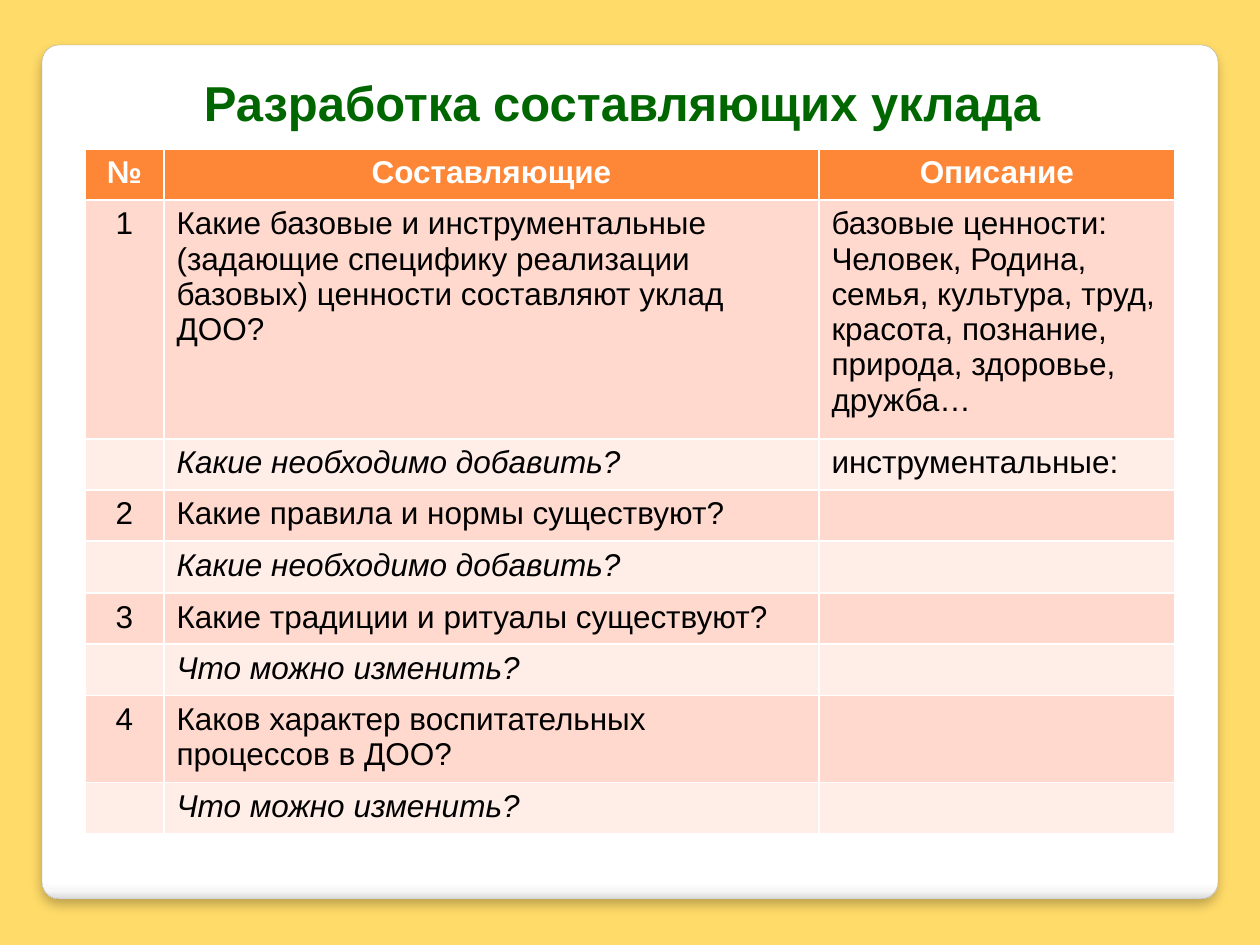
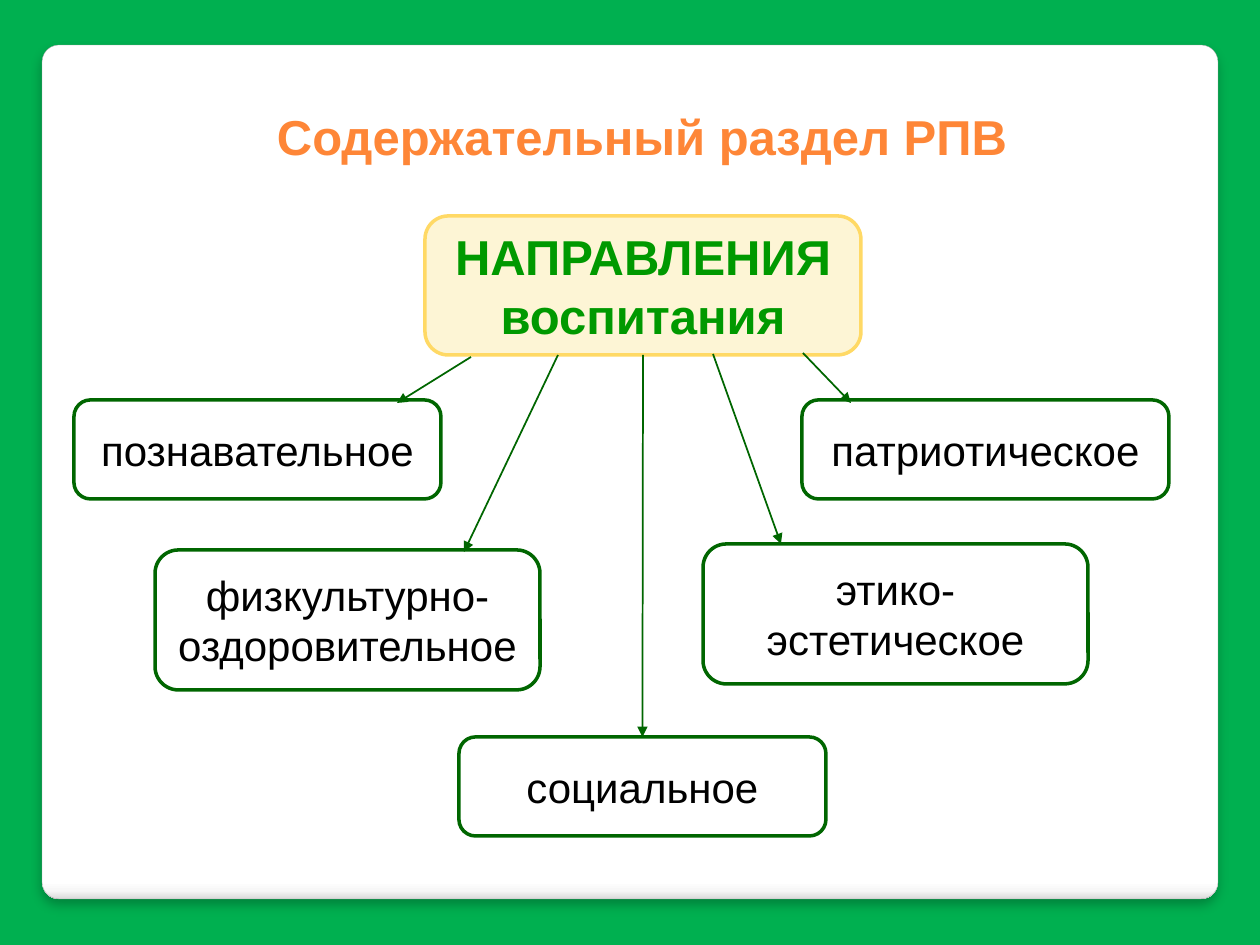
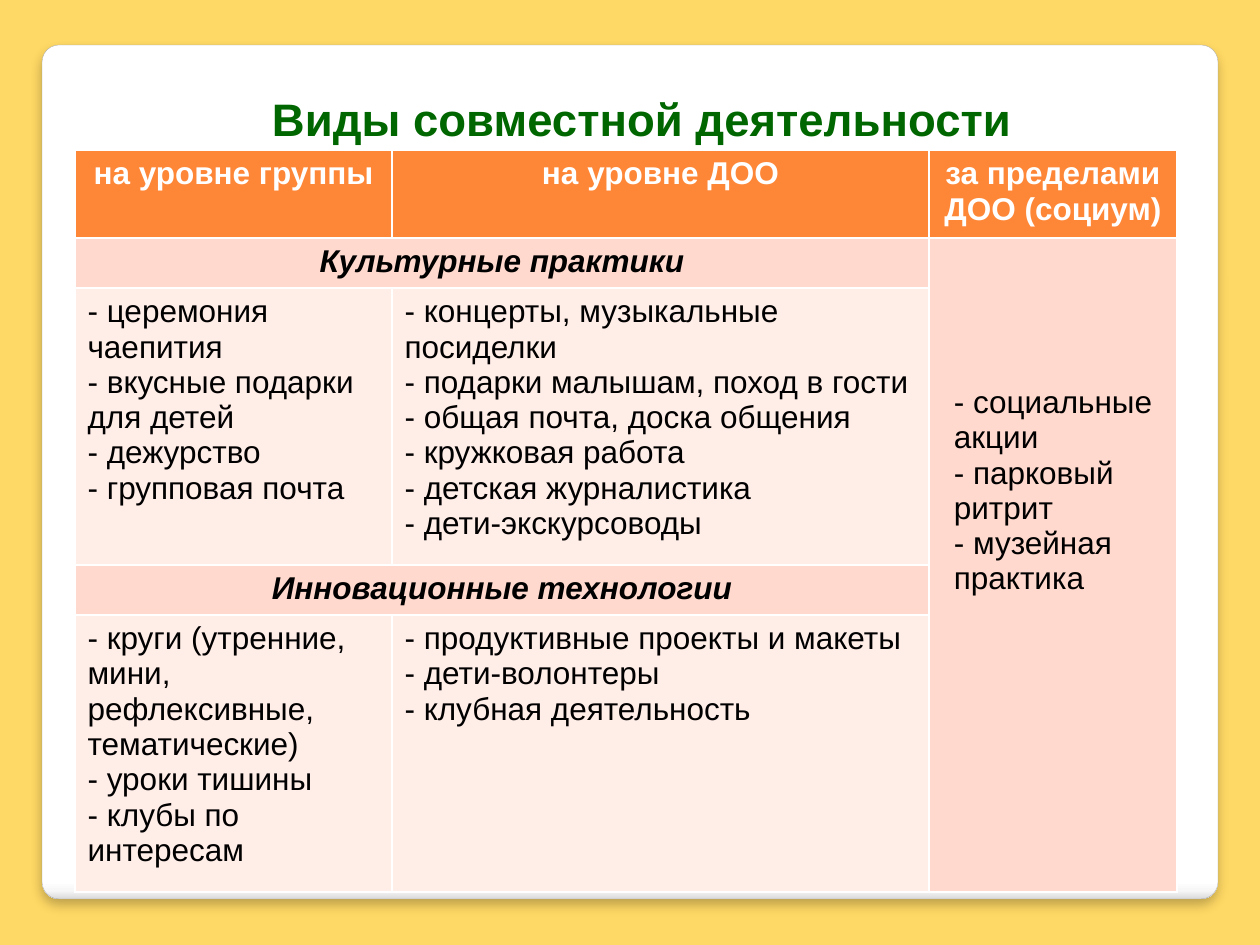
from lxml.etree import SubElement
from pptx import Presentation
from pptx.dml.color import RGBColor
from pptx.enum.shapes import MSO_CONNECTOR, MSO_SHAPE
from pptx.enum.text import MSO_ANCHOR, MSO_AUTO_SIZE, PP_ALIGN
from pptx.oxml.ns import qn
from pptx.util import Emu, Pt

FONT = "Arial"
YELLOW = RGBColor(0xFF, 0xDB, 0x69)
GOLD = RGBColor(0xFF, 0xD9, 0x65)
CREAM = RGBColor(0xFD, 0xF5, 0xD5)
GREEN = RGBColor(0x00, 0xB0, 0x50)
MID_GREEN = RGBColor(0x00, 0x99, 0x00)
DARK_GREEN = RGBColor(0x00, 0x66, 0x00)
ORANGE = RGBColor(0xFE, 0x86, 0x37)
BANDS = RGBColor(0xFF, 0xED, 0xE8), RGBColor(0xFF, 0xD9, 0xCE)
WHITE = RGBColor(0xFF, 0xFF, 0xFF)
BLACK = RGBColor(0x00, 0x00, 0x00)
GREY = RGBColor(0xA4, 0xA4, 0xA4)
CARD_STOPS = ((0, "FFFFFF"), (98, "FFFFFF"), (99, "F7F7F7"), (100, "DADADA"))


def px(n):
    return Emu(round(n * 914400 / 126))


def add_color(parent, value, alpha=None):
    clr = SubElement(parent, qn("a:srgbClr"), val=value)
    if alpha:
        SubElement(clr, qn("a:alpha"), val=str(alpha * 1000))


class Deck:
    def __init__(self):
        self.prs = Presentation()
        self.prs.slide_width, self.prs.slide_height = px(1260), px(945)
        self.s = None

    def slide(self, background):
        self.s = self.prs.slides.add_slide(self.prs.slide_layouts[5])
        fill = self.s.background.fill
        fill.solid()
        fill.fore_color.rgb = background
        self.card()

    def card(self):
        """White rounded panel, placed behind the title."""
        sp = self.s.shapes.add_shape(
            MSO_SHAPE.ROUNDED_RECTANGLE, px(42), px(45), px(1176), px(854))
        sp.adjustments[0] = 0.02
        sp.line.color.rgb = GREY
        sp.line.width = Pt(0.16)
        sp.fill.gradient()
        sp.fill.gradient_angle = 270
        stops = sp.element.spPr.find(".//" + qn("a:gsLst"))
        stops.clear()
        for pos, value in CARD_STOPS:
            add_color(SubElement(stops, qn("a:gs"), pos=str(pos * 1000)), value)
        sp.shadow.inherit = False
        shadow = SubElement(
            sp.element.spPr.find(qn("a:effectLst")), qn("a:outerShdw"),
            blurRad=str(Pt(6)), dist=str(Pt(4)), dir="5400000",
            algn="t", rotWithShape="0")
        add_color(shadow, "000000", 25)
        self.s.shapes.title.element.addprevious(sp.element)

    def set_text(self, tf, text, size, color, bold=False, italic=False,
                 align=PP_ALIGN.CENTER, spacing=None):
        tf.text = text
        tf.word_wrap = True
        for p in tf.paragraphs:
            p.alignment = align
            p.line_spacing = spacing
            p.font.name = FONT
            p.font.size = Pt(size)
            p.font.color.rgb = color
            p.font.bold = bold
            p.font.italic = italic

    def title(self, text, x, y, w, h, color=DARK_GREEN, size=28, spacing=None):
        sp = self.s.shapes.title
        sp.left, sp.top, sp.width, sp.height = map(px, (x, y, w, h))
        tf = sp.text_frame
        tf.auto_size = MSO_AUTO_SIZE.NONE
        tf.vertical_anchor = MSO_ANCHOR.MIDDLE
        self.set_text(tf, text, size, color, bold=True, spacing=spacing)

    def box(self, text, x, y, w, h, fill=None, line=DARK_GREEN,
            size=24, color=BLACK, bold=False):
        sp = self.s.shapes.add_shape(
            MSO_SHAPE.ROUNDED_RECTANGLE, px(x), px(y), px(w), px(h))
        sp.shadow.inherit = False
        if fill:
            sp.fill.solid()
            sp.fill.fore_color.rgb = fill
        else:
            sp.fill.background()
        sp.line.color.rgb = line
        sp.line.width = Pt(2)
        sp.text_frame.vertical_anchor = MSO_ANCHOR.MIDDLE
        self.set_text(sp.text_frame, text, size, color, bold)
        return sp

    def arrow(self, x1, y1, x2, y2):
        cxn = self.s.shapes.add_connector(
            MSO_CONNECTOR.STRAIGHT, px(x1), px(y1), px(x2), px(y2))
        cxn.line.color.rgb = DARK_GREEN
        cxn.line.width = Pt(1)
        spPr = cxn.element.spPr
        SubElement(spPr.find(qn("a:ln")), qn("a:tailEnd"), type="triangle")
        SubElement(spPr, qn("a:effectLst"))
        return cxn

    def cell(self, cell, text, **style):
        self.set_text(cell.text_frame, text, 18, BLACK, **style)

    def table(self, x, y, widths, heights, rows):
        """Banded table with an orange header; body text is left-aligned."""
        table = self.s.shapes.add_table(
            len(heights), len(widths), px(x), px(y),
            px(sum(widths)), px(sum(heights))).table
        for column, w in zip(table.columns, widths):
            column.width = px(w)
        for i, (row, h, texts) in enumerate(zip(table.rows, heights, rows)):
            row.height = px(h)
            for cell, text in zip(row.cells, texts):
                cell.fill.solid()
                cell.fill.fore_color.rgb = BANDS[i % 2] if i else ORANGE
                if i == 0:
                    self.set_text(cell.text_frame, text, 18, WHITE, bold=True)
                elif text:
                    self.cell(cell, text, align=PP_ALIGN.LEFT)
        return table


def components_slide(deck):
    deck.slide(YELLOW)
    deck.title("Разработка составляющих уклада", 164, 66, 916, 72)
    add, change = "Какие необходимо добавить?", "Что можно изменить?"
    rows = [
        ("№", "Составляющие", "Описание"),
        ("1", "Какие базовые и инструментальные (задающие специфику реализации "
              "базовых) ценности составляют уклад ДОО?",
         "базовые ценности:\nЧеловек, Родина, семья, культура, труд, красота, "
         "познание, природа, здоровье, дружба…"),
        ("", add, "инструментальные:"),
        ("2", "Какие правила и нормы существуют?", ""),
        ("", add, ""),
        ("3", "Какие традиции и ритуалы существуют?", ""),
        ("", change, ""),
        ("4", "Каков характер воспитательных процессов в ДОО?", ""),
        ("", change, ""),
    ]
    heights = [51, 239, 51, 51, 52, 51, 51, 87, 51]
    table = deck.table(85, 149, [79, 655, 356], heights, rows)
    for i, (number, question, _) in enumerate(rows[1:], 1):
        if number:
            deck.cell(table.cell(i, 0), number)
        else:
            deck.cell(table.cell(i, 1), question, italic=True,
                      align=PP_ALIGN.LEFT)


def directions_slide(deck):
    deck.slide(GREEN)
    deck.title("Содержательный раздел РПВ", 171, 100, 942, 72, ORANGE)
    main_box = deck.box("НАПРАВЛЕНИЯ\nвоспитания", 425, 216, 436, 139,
                        CREAM, GOLD, 28, MID_GREEN, bold=True)
    small, large = (367, 99), (385, 140)
    deck.box("патриотическое", 802, 400, *small)
    deck.box("познавательное", 74, 400, *small)
    social = deck.box("социальное", 459, 737, *small)
    deck.box("физкультурно-оздоровительное", 155, 550, *large)
    deck.box("этико-эстетическое", 703, 544, *large)
    for ends in ((803, 353, 851, 403), (471, 357, 397, 403),
                 (713, 354, 781, 544), (558, 355, 464, 552)):
        deck.arrow(*ends)
    middle = deck.arrow(643, 355, 643, 737)
    middle.begin_connect(main_box, 2)
    middle.end_connect(social, 0)


def activities_slide(deck):
    deck.slide(GOLD)
    deck.title("Виды совместной деятельности", 105, 76, 1074, 73,
               size=26, spacing=1.2)
    rows = [
        ("на уровне группы", "на уровне ДОО", "за пределами ДОО (социум)"),
        ("Культурные практики", "",
         "- социальные акции\n- парковый ритрит\n- музейная практика"),
        ("- церемония чаепития\n- вкусные подарки для детей\n- дежурство\n"
         "- групповая почта",
         "- концерты, музыкальные посиделки\n- подарки малышам, поход в гости\n"
         "- общая почта, доска общения\n- кружковая работа\n"
         "- детская журналистика\n- дети-экскурсоводы", ""),
        ("Инновационные технологии", "", ""),
        ("- круги (утренние, мини, рефлексивные, тематические)\n"
         "- уроки тишины\n- клубы по интересам",
         "- продуктивные проекты и макеты\n- дети-волонтеры\n"
         "- клубная деятельность", ""),
    ]
    table = deck.table(75, 150, [317, 537, 248], [88, 50, 277, 50, 277], rows)
    for i in (1, 3):
        section = table.cell(i, 0)
        section.merge(table.cell(i, 1))
        deck.cell(section, rows[i][0], bold=True, italic=True)
    outside = table.cell(1, 2)
    outside.merge(table.cell(4, 2))
    outside.margin_left, outside.margin_top = px(25), px(147)


def main():
    deck = Deck()
    components_slide(deck)
    directions_slide(deck)
    activities_slide(deck)
    deck.prs.save("out.pptx")


if __name__ == "__main__":
    main()
